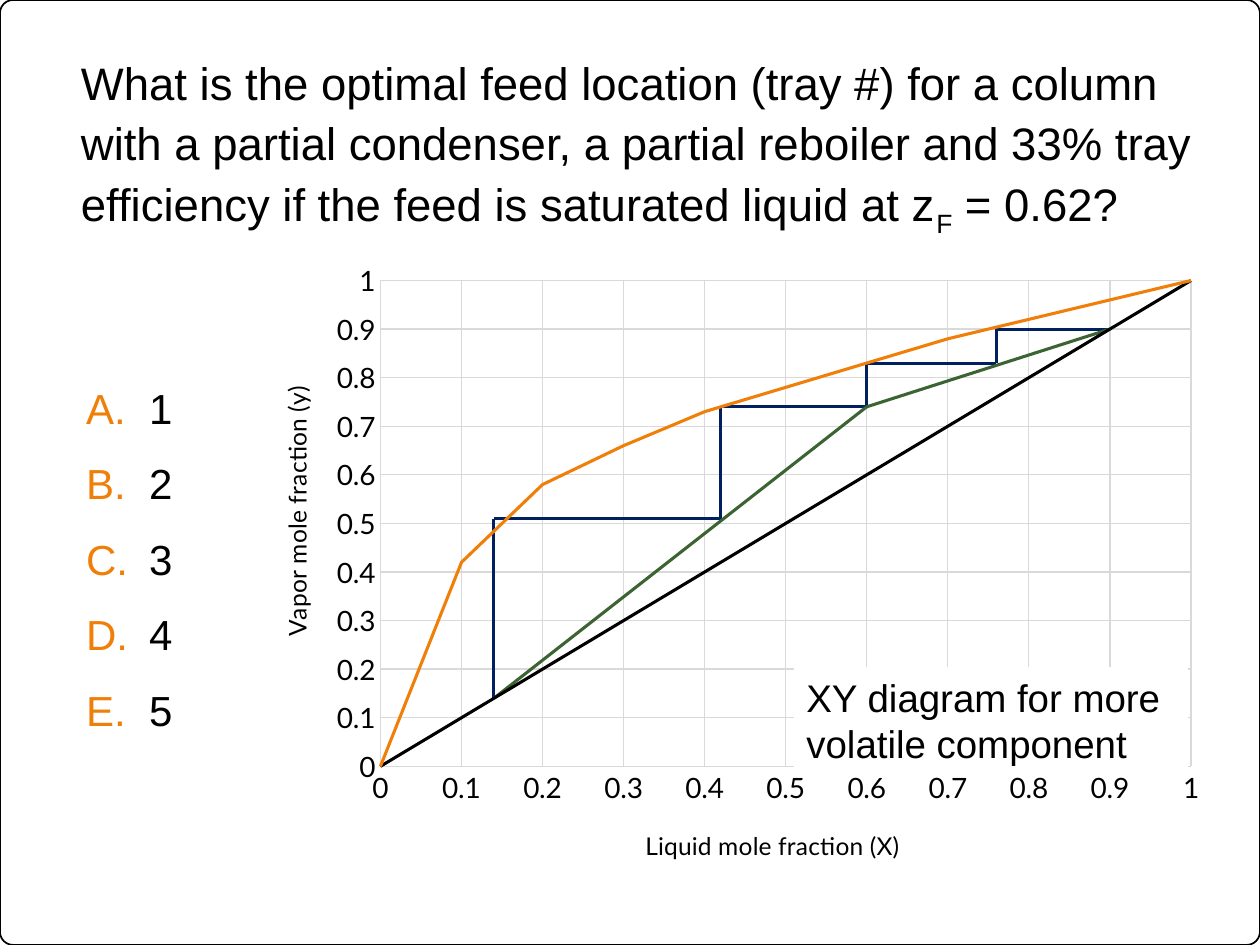
from dataclasses import dataclass
from itertools import pairwise

from lxml import etree
from pptx import Presentation
from pptx.chart.data import XyChartData
from pptx.dml.color import RGBColor
from pptx.enum.chart import XL_CHART_TYPE, XL_TICK_MARK
from pptx.enum.shapes import MSO_SHAPE
from pptx.enum.text import MSO_ANCHOR, PP_ALIGN
from pptx.oxml.ns import qn
from pptx.util import Emu, Pt

SMOOTH = XL_CHART_TYPE.XY_SCATTER_SMOOTH_NO_MARKERS
NO_TICK = XL_TICK_MARK.NONE
ROUND, RECT = MSO_SHAPE.ROUNDED_RECTANGLE, MSO_SHAPE.RECTANGLE
TOP, MIDDLE, LEFT = MSO_ANCHOR.TOP, MSO_ANCHOR.MIDDLE, PP_ALIGN.LEFT
BLACK, WHITE, GRID = "000000", "FFFFFF", "D9D9D9"
ORANGE, GREEN, NAVY = "F07F09", "3B6432", "002060"


@dataclass
class Box:
    x: int
    y: int
    w: int
    h: int

    def emu(self) -> list[Emu]:
        return [px(n) for n in (self.x, self.y, self.w, self.h)]


@dataclass
class Curve:
    color: str
    points: list[tuple[float, float]]


def px(n: int) -> Emu:
    return Emu(round(n * 914400 / 126))


def rgb(code: str) -> RGBColor:
    return RGBColor.from_string(code)


def style(font, size: int, name: str = "Arial") -> None:
    font.size, font.name = Pt(size), name
    font.color.rgb = rgb(BLACK)


def stroke(line, color: str, width: float) -> None:
    line.color.rgb = rgb(color)
    line.width = Pt(width)


def add_text(slide, box: Box):
    frame = slide.shapes.add_textbox(*box.emu()).text_frame
    frame.word_wrap = True
    frame.vertical_anchor = TOP
    frame.margin_left = frame.margin_top = 0
    frame.margin_right = frame.margin_bottom = 0
    return frame


def place(node, **parts) -> None:
    """Give a chart part a manual layout in fractions of the chart."""
    old = node.find(qn("c:layout"))
    if old is not None:
        node.remove(old)
    layout = etree.Element(qn("c:layout"))
    manual = etree.SubElement(layout, qn("c:manualLayout"))
    for key, val in parts.items():
        etree.SubElement(manual, qn(f"c:{key}")).set("val", str(val))
    text = node.find(qn("c:tx"))
    node.insert(0 if text is None else 1, layout)


def set_axis(axis, title: str, x: float, y: float) -> None:
    axis.minimum_scale, axis.maximum_scale, axis.major_unit = 0, 1, 0.1
    axis.major_tick_mark = axis.minor_tick_mark = NO_TICK
    axis.has_major_gridlines = True
    stroke(axis.major_gridlines.format.line, GRID, 0.75)
    stroke(axis.format.line, GRID, 0.75)
    style(axis.tick_labels.font, 16, "Lato")
    axis.tick_labels.number_format = "General"
    axis.tick_labels.number_format_is_linked = False
    para = axis.axis_title.text_frame.paragraphs[0]
    para.text = title
    style(para.font, 14, "Lato")
    para.font.bold = False
    place(axis.axis_title._element, xMode="edge", yMode="edge", x=x, y=y)


def add_plot(slide, box: Box, curves: list[Curve]) -> None:
    data = XyChartData()
    for i, curve in enumerate(curves, 1):
        series = data.add_series(f"Series {i}")
        for x, y in curve.points:
            series.add_data_point(x, y)
    chart = slide.shapes.add_chart(SMOOTH, *box.emu(), data).chart
    chart.has_legend = chart.has_title = False
    style(chart.font, 10, "Lato")
    plot = chart.plots[0]
    plot.vary_by_categories = False
    for series, curve in zip(plot.series, curves):
        series.smooth = True
        stroke(series.format.line, curve.color, 1.75)
    set_axis(chart.category_axis, "Liquid mole fraction (X)", 0.4, 0.91)
    set_axis(chart.value_axis, "Vapor mole fraction (y)", 0.02, 0.21)
    area = chart._chartSpace.find(f".//{qn('c:plotArea')}")
    place(area, layoutTarget="inner", xMode="edge", yMode="edge",
          x=0.13, y=0.05, w=0.84, h=0.77)


def add_list(slide, box: Box, items: list[str]) -> None:
    frame = add_text(slide, box)
    for i, item in enumerate(items):
        para = frame.add_paragraph() if i else frame.paragraphs[0]
        para.text = item
        para.line_spacing = 1.5
        props = para._p.get_or_add_pPr()
        props.set("marL", str(px(63)))
        props.set("indent", str(-px(63)))
        tint = etree.SubElement(props, qn("a:buClr"))
        etree.SubElement(tint, qn("a:srgbClr")).set("val", ORANGE)
        etree.SubElement(props, qn("a:buFont")).set("typeface", "Arial")
        etree.SubElement(props, qn("a:buAutoNum")).set("type", "alphaUcPeriod")
        style(para.font, 24)


deck = Presentation()
deck.slide_width, deck.slide_height = px(1260), px(945)
slide = deck.slides.add_slide(deck.slide_layouts[6])

# Frame around the slide
frame = slide.shapes.add_shape(ROUND, *Box(0, 0, 1260, 945).emu())
frame.adjustments[0] = 0.014
frame.shadow.inherit = False
frame.fill.background()
stroke(frame.line, BLACK, 1)

# Diagram: equilibrium, diagonal, operating lines, then stages
vapor = [0, 0.42, 0.58, 0.66, 0.73, 0.78, 0.83, 0.88, 0.92, 0.96, 1]
stairs = [(0.9, 0.9), (0.76, 0.9), (0.76, 0.83), (0.6, 0.83), (0.6, 0.74),
          (0.42, 0.74), (0.42, 0.51), (0.14, 0.51), (0.14, 0.14)]
feed = (0.6, 0.74)
curves = [
    Curve(ORANGE, [(i / 10, y) for i, y in enumerate(vapor)]),
    Curve(BLACK, [(0, 0), (1, 1)]),
    Curve(GREEN, [stairs[0], feed]),
    Curve(GREEN, [stairs[-1], feed]),
    *(Curve(NAVY, list(step)) for step in pairwise(stairs)),
]
add_plot(slide, Box(255, 249, 965, 631), curves)

# Question
para = add_text(slide, Box(81, 50, 1134, 239)).paragraphs[0]
para.line_spacing = 1.1
style(para.font, 26)
para.add_run().text = (
    "What is the optimal feed location (tray #) for a column with a partial "
    "condenser, a partial reboiler and 33% tray efficiency if the feed is "
    "saturated liquid at z")
sub = para.add_run()
sub.text = "F"
sub.font._element.set("baseline", "-25000")
para.add_run().text = " = 0.62?"

# Answers
add_list(slide, Box(86, 357, 146, 456), ["1", "2", "3", "4", "5"])

# Note on the diagram
note = slide.shapes.add_shape(RECT, *Box(794, 667, 394, 106).emu())
note.shadow.inherit = False
note.fill.solid()
note.fill.fore_color.rgb = rgb(WHITE)
note.line.fill.background()
note.text_frame.word_wrap = False
note.text_frame.vertical_anchor = MIDDLE
note.text_frame.text = "XY diagram for more\nvolatile component"
for para in note.text_frame.paragraphs:
    para.alignment = LEFT
    style(para.font, 22)

deck.save("out.pptx")
